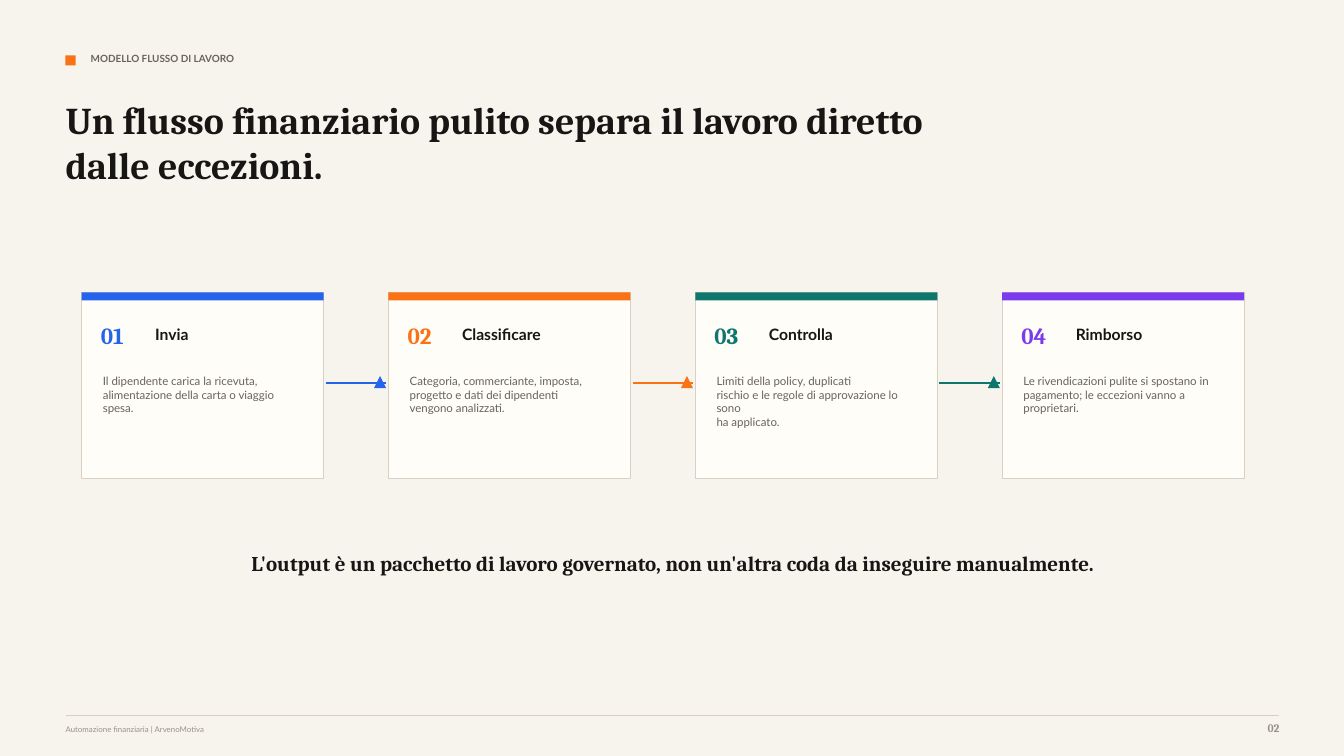
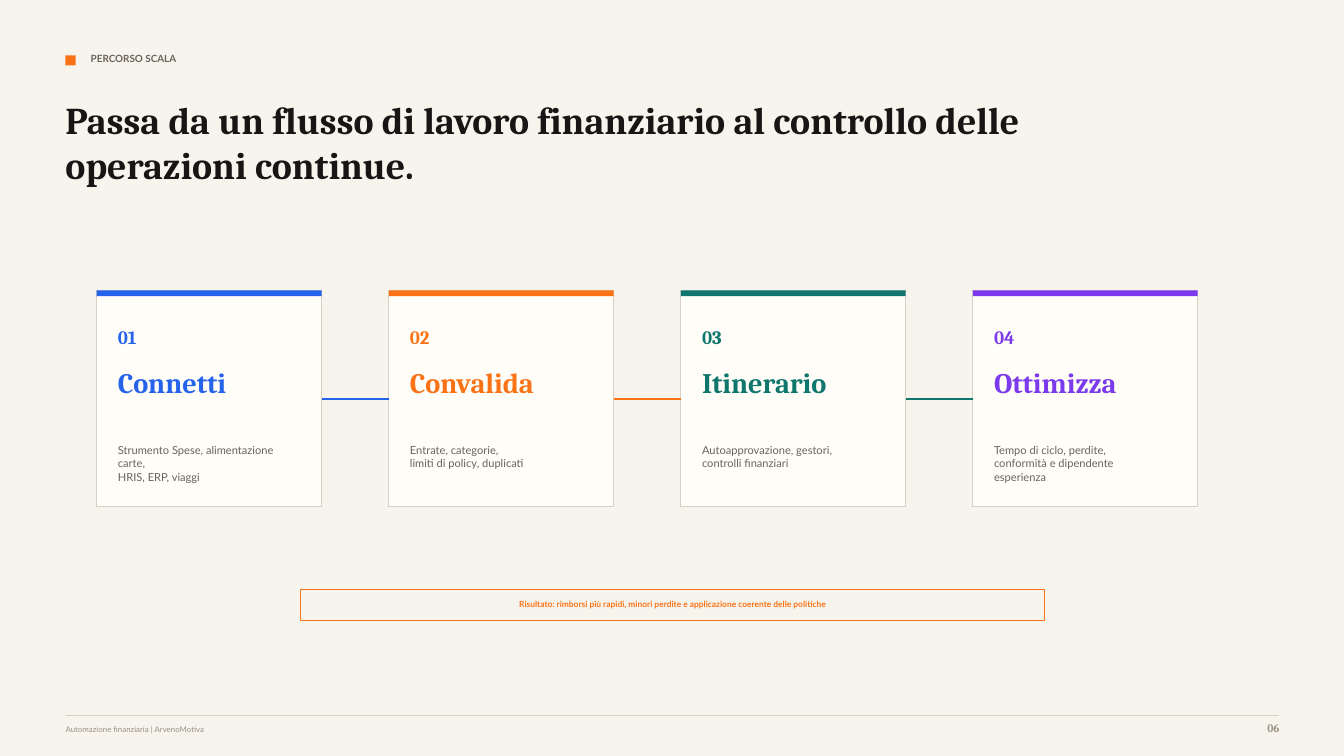
from pptx import Presentation
from pptx.dml.color import RGBColor as Rgb
from pptx.enum.shapes import MSO_CONNECTOR as Link, MSO_SHAPE as Kind
from pptx.enum.text import MSO_ANCHOR as Anchor, PP_ALIGN as Align
from pptx.oxml.ns import qn
from pptx.util import Inches, Pt

HUES = {
    "paper": "F7F4EE", "card": "FFFDF8", "edge": "D9D0C3",
    "ink": "171614", "grey": "69635A", "pale": "9A9184",
    "blue": "2563EB", "orange": "F97316", "green": "0F766E", "violet": "7C3AED",
}
STEPS = ["blue", "orange", "green", "violet"]


def style(name, size, bold=True):
    return {"name": name, "size": Pt(size), "bold": bold}


FONTS = {
    "label": style("Lato", 7.1),
    "title": style("Cambria", 27),
    "foot": style("Lato", 5.6, False),
    "page": style("Cambria", 8.2),
    "index": style("Cambria", 16.5),
    "name": style("Lato", 11.2),
    "body": style("Lato", 8.2, False),
    "claim": style("Cambria", 15),
    "phase": style("Cambria", 13.5),
    "head": style("Cambria", 20.2),
    "note": style("Lato", 7.9, False),
    "result": style("Lato", 6),
}


def hue(key):
    return Rgb.from_string(HUES[key])


def spread(first, last, count):
    """Return evenly spaced left edges."""
    step = (last - first) / (count - 1)
    return [first + i * step for i in range(count)]


class Deck:
    def __init__(self):
        self.prs = Presentation()
        self.prs.slide_width, self.prs.slide_height = Inches(13.33), Inches(7.5)
        self.slide = None

    def start(self, label, title, width, page):
        """Open a slide with its shared header and footer."""
        self.slide = self.prs.slides.add_slide(self.prs.slide_layouts[6])
        fill = self.slide.background.fill
        fill.solid()
        fill.fore_color.rgb = hue("paper")
        self.shape(0.65, 0.55, 0.1, 0.1, "orange")
        self.text(0.9, 0.52, 5.83, 0.19, label, "label", "grey")
        self.text(0.65, 0.96, width, 1.05, title, "title", "ink")
        self.rule(0.65, 12.69, 7.1, "edge", 0.75)
        self.text(0.65, 7.19, 7.92, 0.15, "Automazione finanziaria | ArvenoMotiva",
                  "foot", "pale")
        self.text(12.19, 7.15, 0.5, 0.19, page, "page", "pale", Align.RIGHT)

    def shape(self, x, y, w, h, fill=None, line=None, kind=Kind.RECTANGLE):
        box = self.slide.shapes.add_shape(kind, *map(Inches, (x, y, w, h)))
        box.shadow.inherit = False
        if fill:
            box.fill.solid()
            box.fill.fore_color.rgb = hue(fill)
        else:
            box.fill.background()
        if line:
            box.line.color.rgb = hue(line)
            box.line.width = Pt(0.75)
        else:
            box.line.fill.background()
        return box

    def label(self, box, words, font, color, align=Align.LEFT, top=0):
        """Set the words of a shape or text box."""
        frame = box.text_frame
        frame.text = words
        form = {"word_wrap": True, "vertical_anchor": Anchor.TOP,
                "margin_left": 0, "margin_right": 0,
                "margin_top": Inches(top), "margin_bottom": 0}
        for key, value in form.items():
            setattr(frame, key, value)
        for para in frame.paragraphs:
            para.alignment = align
            for run in para.runs:
                for key, value in FONTS[font].items():
                    setattr(run.font, key, value)
                run.font.color.rgb = hue(color)

    def text(self, x, y, w, h, words, font, color, align=Align.LEFT):
        box = self.slide.shapes.add_textbox(*map(Inches, (x, y, w, h)))
        self.label(box, words, font, color, align)

    def rule(self, left, right, y, color, width):
        line = self.slide.shapes.add_connector(
            Link.STRAIGHT, *map(Inches, (left, y, right, y)))
        line.line.color.rgb = hue(color)
        line.line.width = Pt(width)
        props = line._element.spPr
        props.append(props.makeelement(qn("a:effectLst"), {}))
        return line

    def card(self, x, y, w, h, band, color):
        box = self.shape(x, y, w, h, "card", "edge")
        self.shape(x, y, w, band, color)
        return box


def flow(deck):
    deck.start("MODELLO FLUSSO DI LAVORO",
               "Un flusso finanziario pulito separa il lavoro diretto dalle eccezioni.",
               9.38, "02")
    items = [
        ("Invia", "Il dipendente carica la ricevuta,\n"
                  "alimentazione della carta o viaggio\nspesa."),
        ("Classificare", "Categoria, commerciante, imposta,\n"
                         "progetto e dati dei dipendenti\nvengono analizzati."),
        ("Controlla", "Limiti della policy, duplicati\n"
                      "rischio e le regole di approvazione lo sono\nha applicato."),
        ("Rimborso", "Le rivendicazioni pulite si spostano in\n"
                     "pagamento; le eccezioni vanno a\nproprietari."),
    ]
    wide = 2.4
    lefts = spread(0.81, 9.94, len(items))
    for i, (x, color, (name, body)) in enumerate(zip(lefts, STEPS, items)):
        deck.card(x, 2.9, wide, 1.85, 0.08, color)
        deck.text(x + 0.19, 3.19, 0.46, 0.29, f"{i + 1:02}", "index", color)
        deck.text(x + 0.73, 3.22, 1.33, 0.21, name, "name", "ink")
        deck.text(x + 0.21, 3.71, 1.92, 0.71, body, "body", "grey")
        if i < len(items) - 1:
            start = x + wide + 0.02
            deck.rule(start, start + 0.6, 3.8, color, 1.5)
            deck.shape(start + 0.48, 3.73, 0.12, 0.12, color, kind=Kind.ISOSCELES_TRIANGLE)
    deck.text(1.83, 5.46, 9.69, 0.44,
              "L'output è un pacchetto di lavoro governato, "
              "non un'altra coda da inseguire manualmente.",
              "claim", "ink", Align.CENTER)


def scale(deck):
    deck.start("PERCORSO SCALA",
               "Passa da un flusso di lavoro finanziario al controllo "
               "delle operazioni continue.", 9.9, "06")
    items = [
        ("Connetti", "Strumento Spese, alimentazione carte,\nHRIS, ERP, viaggi"),
        ("Convalida", "Entrate, categorie,\nlimiti di policy, duplicati"),
        ("Itinerario", "Autoapprovazione, gestori,\ncontrolli finanziari"),
        ("Ottimizza", "Tempo di ciclo, perdite,\nconformità e dipendente\nesperienza"),
    ]
    wide = 2.23
    lefts = spread(0.96, 9.65, len(items))
    cards = []
    for i, (x, color, (name, note)) in enumerate(zip(lefts, STEPS, items)):
        cards.append(deck.card(x, 2.88, wide, 2.15, 0.06, color))
        deck.text(x + 0.21, 3.23, 0.46, 0.25, f"{i + 1:02}", "phase", color)
        deck.text(x + 0.21, 3.62, 1.67, 0.46, name, "head", color)
        deck.text(x + 0.21, 4.4, 1.73, 0.46, note, "note", "grey")
    for x, end, color, one, two in zip(lefts, lefts[1:], STEPS, cards, cards[1:]):
        line = deck.rule(x + wide, end, 3.96, color, 1.5)
        line.begin_connect(one, 3)
        line.end_connect(two, 1)
    box = deck.shape(2.98, 5.85, 7.38, 0.31, line="orange")
    deck.label(box, "Risultato: rimborsi più rapidi, minori perdite "
                    "e applicazione coerente delle politiche",
               "result", "orange", Align.CENTER, 0.09)


def main():
    deck = Deck()
    flow(deck)
    scale(deck)
    deck.prs.save("out.pptx")


if __name__ == "__main__":
    main()
